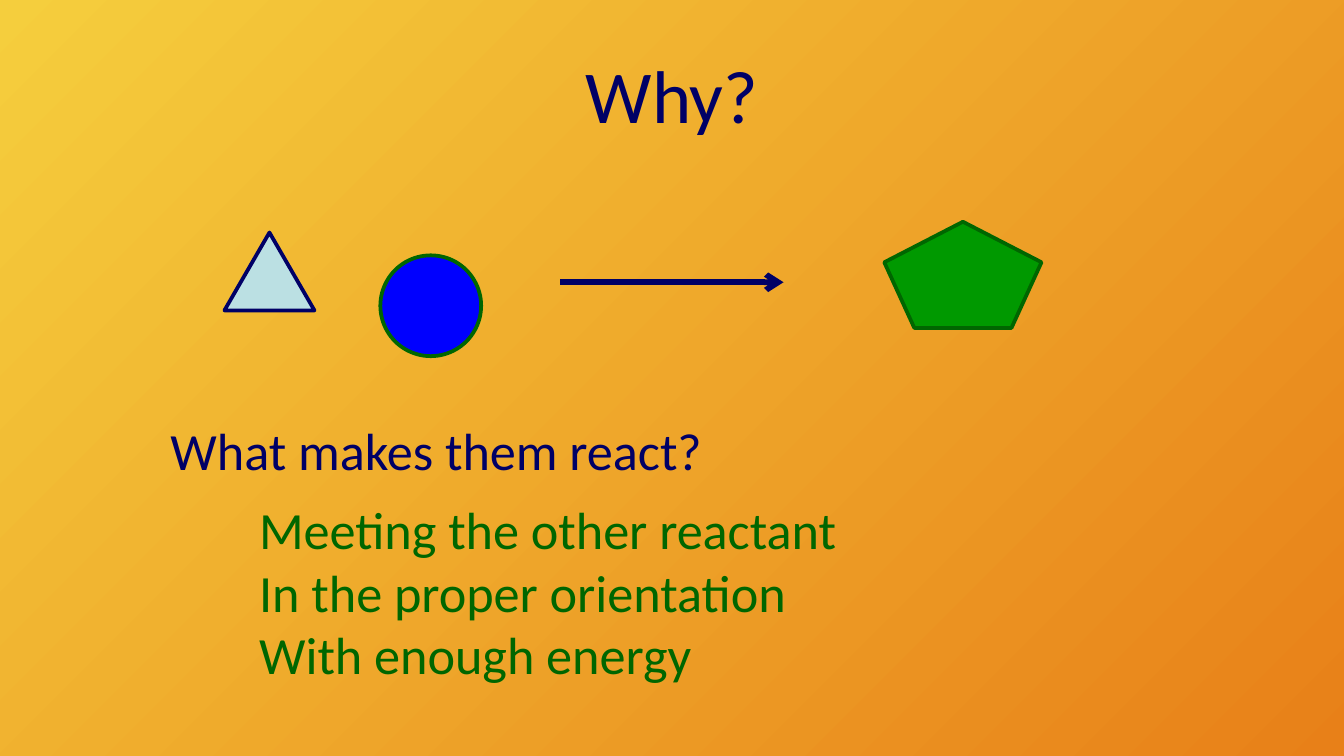
from lxml.etree import SubElement
from pptx import Presentation
from pptx.dml.color import RGBColor
from pptx.enum.shapes import MSO_CONNECTOR, MSO_SHAPE
from pptx.enum.text import MSO_ANCHOR, MSO_AUTO_SIZE, PP_ALIGN
from pptx.oxml.ns import qn
from pptx.util import Inches, Pt

NAVY = "000066"
GREEN = "006600"


def color(value):
    return RGBColor.from_string(value)


def add_text(text, left, top, width, height, size=28, fill=NAVY,
             align=PP_ALIGN.LEFT, anchor=MSO_ANCHOR.TOP, wrap=False):
    box = page.shapes.add_textbox(
        Inches(left), Inches(top), Inches(width), Inches(height))
    frame = box.text_frame
    frame.word_wrap = wrap
    frame.auto_size = MSO_AUTO_SIZE.NONE if wrap else MSO_AUTO_SIZE.SHAPE_TO_FIT_TEXT
    frame.vertical_anchor = anchor
    frame.text = text
    for para in frame.paragraphs:
        para.alignment = align
        for span in para.runs:
            span.font.name = "Calibri"
            span.font.size = Pt(size)
            span.font.color.rgb = color(fill)


# Widescreen 16:9 page
deck = Presentation()
deck.slide_width = Inches(10)
deck.slide_height = Inches(10) * 9 // 16
page = deck.slides.add_slide(deck.slide_layouts[6])

# Background: diagonal gradient from top left to bottom right
backdrop = page.background.fill
backdrop.gradient()
backdrop.gradient_angle = 315
for stop, value in zip(backdrop.gradient_stops, ("F5CE3D", "E88018")):
    stop.color.rgb = color(value)

# Title
add_text("Why?", 0.5, 0.23, 9, 0.94, size=40,
         align=PP_ALIGN.CENTER, anchor=MSO_ANCHOR.MIDDLE, wrap=True)

# Two reactants and their product
molecules = [
    (MSO_SHAPE.OVAL, 2.83, 1.9, 0.75, 0.75, "0000FF", GREEN),
    (MSO_SHAPE.ISOSCELES_TRIANGLE, 1.67, 1.73, 0.67, 0.58, "BBE0E3", NAVY),
    (MSO_SHAPE.REGULAR_PENTAGON, 6.58, 1.65, 1.17, 0.79, "009900", GREEN),
]
for kind, left, top, width, height, fill, outline in molecules:
    molecule = page.shapes.add_shape(
        kind, Inches(left), Inches(top), Inches(width), Inches(height))
    molecule.shadow.inherit = False
    molecule.fill.solid()
    molecule.fill.fore_color.rgb = color(fill)
    molecule.line.color.rgb = color(outline)
    molecule.line.width = Pt(2)

# Reaction arrow
arrow = page.shapes.add_connector(
    MSO_CONNECTOR.STRAIGHT, Inches(4.17), Inches(2.1), Inches(5.83), Inches(2.1))
arrow.line.color.rgb = color(NAVY)
arrow.line.width = Pt(3)
SubElement(arrow.line._get_or_add_ln(), qn("a:tailEnd"), type="arrow")
SubElement(arrow._element.spPr, qn("a:effectLst"))

# Question and answers
add_text("What makes them react?", 1.17, 3.06, 4.2, 0.57)
answers = ["Meeting the other reactant", "In the proper orientation", "With enough energy"]
add_text("\n".join(answers), 1.83, 3.65, 4.54, 1.51, fill=GREEN)

deck.save("out.pptx")
